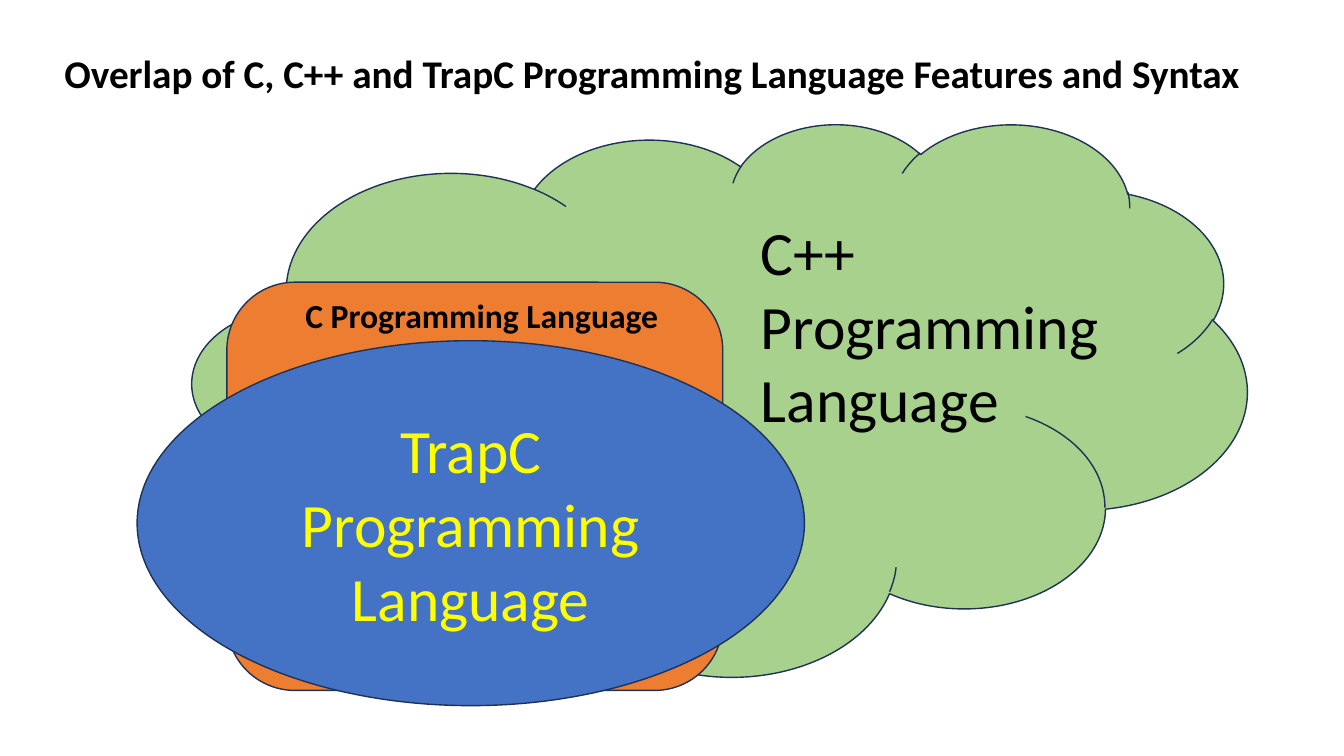
from pptx import Presentation
from pptx.dml.color import RGBColor
from pptx.enum.shapes import MSO_SHAPE
from pptx.enum.text import MSO_ANCHOR, MSO_AUTO_SIZE, PP_ALIGN
from pptx.util import Inches, Pt

CLOUD, ROUNDED, OVAL = MSO_SHAPE.CLOUD, MSO_SHAPE.ROUNDED_RECTANGLE, MSO_SHAPE.OVAL
TOP, MIDDLE = MSO_ANCHOR.TOP, MSO_ANCHOR.MIDDLE
LEFT, CENTER = PP_ALIGN.LEFT, PP_ALIGN.CENTER
FIXED = MSO_AUTO_SIZE.NONE
TITLE_ONLY = 5
FONT = "Calibri"
COLORS = {
    "cpp": "A9D18E",
    "c": "ED7D31",
    "trapc": "4472C4",
    "outline": "1E3256",
    "text": "000000",
    "highlight": "FFFF00",
}

deck = Presentation()
deck.slide_width, deck.slide_height = Inches(13.33), Inches(7.5)
page = deck.slides.add_slide(deck.slide_layouts[TITLE_ONLY])
column, row = deck.slide_width / 100, deck.slide_height / 100


def add_region(parent, kind, area, color):
    left, top, width, height = area
    region = parent.add_shape(kind, int(left * column), int(top * row),
                              int(width * column), int(height * row))
    region.shadow.inherit = False
    region.fill.solid()
    region.fill.fore_color.rgb = RGBColor.from_string(COLORS[color])
    region.line.color.rgb = RGBColor.from_string(COLORS["outline"])
    region.line.width = Pt(1)
    return region


def write(box, text, size, color="text", bold=False, align=LEFT, anchor=TOP):
    frame = box.text_frame
    frame.word_wrap = True
    frame.auto_size = FIXED
    frame.vertical_anchor = anchor
    para = frame.paragraphs[0]
    para.alignment = align
    span = para.add_run()
    span.text = text
    span.font.name = FONT
    span.font.size = Pt(size)
    span.font.bold = bold
    span.font.color.rgb = RGBColor.from_string(COLORS[color])


title = page.shapes.title
title.left, title.top = int(-1.5 * column), int(5.87 * row)
title.width, title.height = int(100 * column), int(7.6 * row)
write(title, "Overlap of C, C++ and TrapC Programming Language Features and Syntax",
      28, bold=True, align=CENTER)

add_region(page.shapes, CLOUD, (14.33, 16.27, 78.45, 73.07), "cpp")

c_group = page.shapes.add_group_shape()
add_region(c_group.shapes, ROUNDED, (16.88, 37.33, 36.9, 54), "c")
c_label = c_group.shapes.add_textbox(int(21.98 * column), int(38.4 * row),
                                     int(28.42 * column), int(6.67 * row))
write(c_label, "C Programming Language", 24, bold=True)

trapc = add_region(page.shapes, OVAL, (10.2, 45.07, 49.65, 48.27), "trapc")
write(trapc, "TrapC Programming Language", 44, "highlight", align=CENTER, anchor=MIDDLE)

cpp_label = page.shapes.add_textbox(int(55.88 * column), int(27.6 * row),
                                    int(31.05 * column), int(30.93 * row))
write(cpp_label, "C++ Programming Language", 44)

deck.save("out.pptx")
